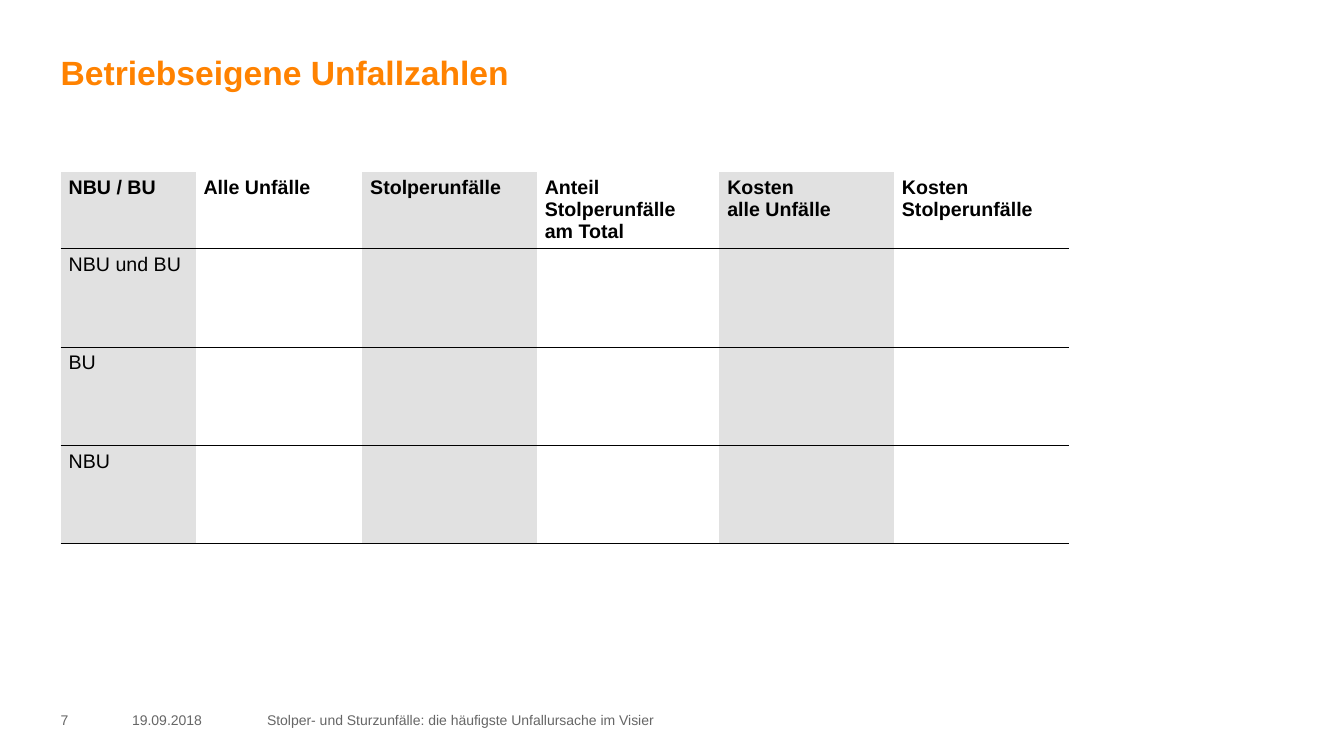
from dataclasses import dataclass

from lxml.etree import SubElement
from pptx import Presentation
from pptx.dml.color import RGBColor
from pptx.enum.text import MSO_ANCHOR, PP_ALIGN
from pptx.oxml.ns import qn
from pptx.slide import Slide
from pptx.table import _Cell
from pptx.text.text import TextFrame
from pptx.util import Cm, Pt

FONT = "Arial"
ORANGE, GREY, BLACK, COLUMN_GREY = "FF8200", "666666", "000000", "E1E1E1"
LEFT = 1.53
HEADER_LINE, ROW_LINE = 0.67, 0.17
HEADER_HEIGHT, ROW_HEIGHT = 1.89, 2.48


@dataclass
class FooterItem:
    """A footer text with its left edge and width in centimetres."""
    text: str
    left: float
    width: float


@dataclass
class Column:
    """A table column with its heading and width in centimetres."""
    heading: str
    width: float


FOOTER = [
    FooterItem("7", LEFT, 1.4),
    FooterItem("19.09.2018", 3.33, 3),
    FooterItem("Stolper- und Sturzunfälle: die häufigste Unfallursache im Visier", 6.73, 21.8),
]
COLUMNS = [
    Column("NBU / BU", 3.4),
    Column("Alle Unfälle", 4.2),
    Column("Stolperunfälle", 4.4),
    Column("Anteil \vStolperunfälle \vam Total", 4.6),
    Column("Kosten \valle Unfälle", 4.4),
    Column("Kosten Stolperunfälle", 4.4),
]
ROW_LABELS = ["NBU und BU", "BU", "NBU"]


def color(value: str) -> RGBColor:
    """Turn a hex string into a colour."""
    return RGBColor.from_string(value)


def format_text(frame: TextFrame, size: float, ink: str, bold: bool = False) -> None:
    """Set font and alignment on every paragraph."""
    for paragraph in frame.paragraphs:
        paragraph.alignment = PP_ALIGN.LEFT
        paragraph.font.name = FONT
        paragraph.font.size = Pt(size)
        paragraph.font.bold = bold
        paragraph.font.color.rgb = color(ink)


def clear_margins(frame: TextFrame, anchor: MSO_ANCHOR) -> None:
    """Remove the insets, wrap the text and anchor it."""
    frame.margin_left = frame.margin_top = frame.margin_right = frame.margin_bottom = 0
    frame.word_wrap = True
    frame.vertical_anchor = anchor


def add_title(slide: Slide, text: str) -> None:
    """Place and format the title placeholder."""
    title = slide.shapes.title
    title.left, title.top, title.width, title.height = Cm(LEFT), Cm(1.32), Cm(30.8), Cm(2.4)
    title.text_frame.text = text
    clear_margins(title.text_frame, MSO_ANCHOR.TOP)
    format_text(title.text_frame, 24, ORANGE, bold=True)


def add_footer_item(slide: Slide, item: FooterItem) -> None:
    """Add one footer text."""
    box = slide.shapes.add_textbox(Cm(item.left), Cm(17.9), Cm(item.width), Cm(0.5))
    box.text_frame.text = item.text
    clear_margins(box.text_frame, MSO_ANCHOR.MIDDLE)
    format_text(box.text_frame, 10, GREY)


def set_borders(cell: _Cell, top: float, bottom: float) -> None:
    """Draw the horizontal borders in points and hide the others."""
    properties = cell._tc.get_or_add_tcPr()
    for tag, width in (("a:lnL", 0), ("a:lnR", 0), ("a:lnT", top), ("a:lnB", bottom)):
        line = SubElement(properties, qn(tag), w=str(Pt(width)))
        if width:
            fill = SubElement(line, qn("a:solidFill"))
            SubElement(fill, qn("a:srgbClr"), val=BLACK)
        else:
            SubElement(line, qn("a:noFill"))


def add_accident_table(slide: Slide) -> None:
    """Add the accident table with alternating grey columns."""
    row_count = len(ROW_LABELS) + 1
    width = sum(column.width for column in COLUMNS)
    height = HEADER_HEIGHT + ROW_HEIGHT * len(ROW_LABELS)
    table = slide.shapes.add_table(
        row_count, len(COLUMNS), Cm(LEFT), Cm(4.33), Cm(width), Cm(height)).table
    table.first_row = table.horz_banding = False
    for row_index, row in enumerate(table.rows):
        is_header = row_index == 0
        row.height = Cm(HEADER_HEIGHT if is_header else ROW_HEIGHT)
        top = (0, HEADER_LINE, ROW_LINE, ROW_LINE)[row_index]
        bottom = HEADER_LINE if is_header else ROW_LINE
        for column_index, column in enumerate(COLUMNS):
            table.columns[column_index].width = Cm(column.width)
            cell = table.cell(row_index, column_index)
            if is_header:
                cell.text = column.heading
            elif column_index == 0:
                cell.text = ROW_LABELS[row_index - 1]
            cell.margin_left = cell.margin_right = Cm(0.2)
            cell.margin_top = cell.margin_bottom = Cm(0.13)
            format_text(cell.text_frame, 14, BLACK, bold=is_header)
            set_borders(cell, top, bottom)
            if column_index % 2 == 0:
                cell.fill.solid()
                cell.fill.fore_color.rgb = color(COLUMN_GREY)
            else:
                cell.fill.background()


def main() -> None:
    """Build and save the slide."""
    presentation = Presentation()
    presentation.slide_width, presentation.slide_height = Cm(33.87), Cm(19.05)
    slide = presentation.slides.add_slide(presentation.slide_layouts[5])
    add_title(slide, "Betriebseigene Unfallzahlen")
    add_accident_table(slide)
    for item in FOOTER:
        add_footer_item(slide, item)
    presentation.save("out.pptx")


if __name__ == "__main__":
    main()
